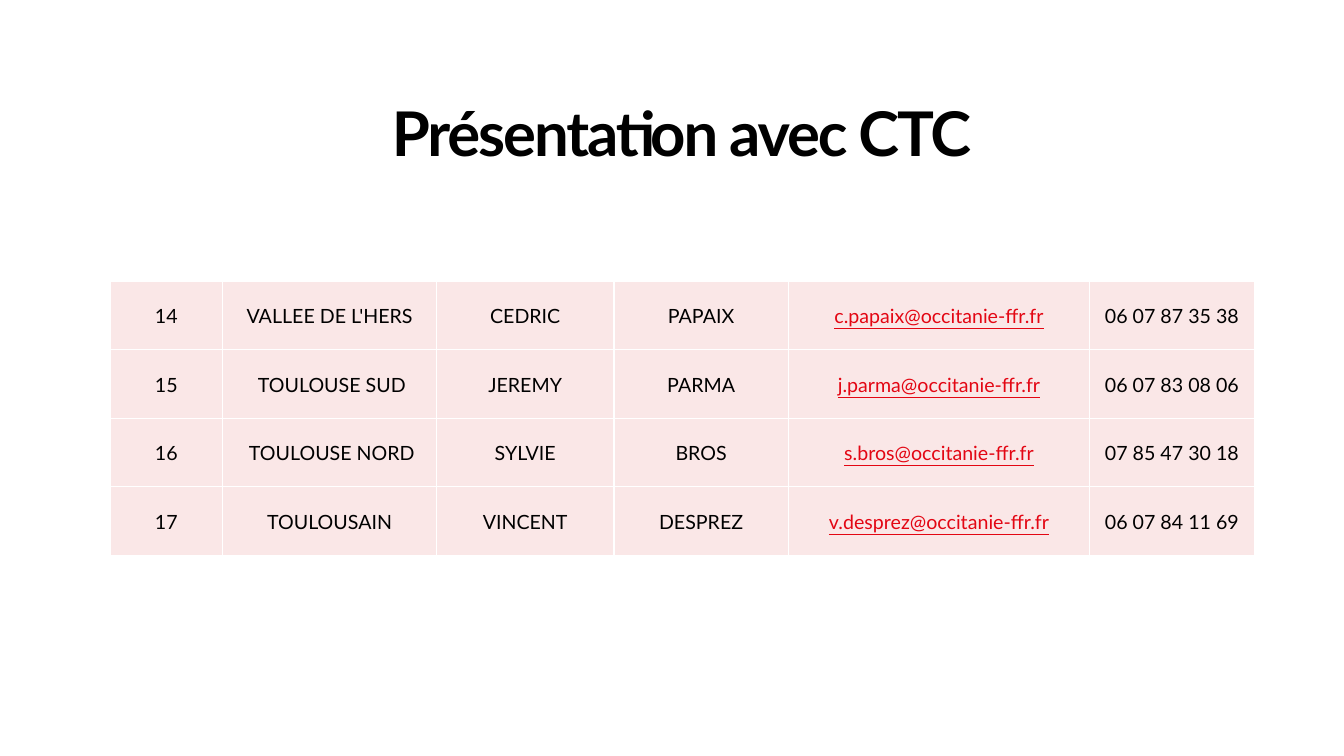
from lxml.etree import SubElement
from pptx import Presentation
from pptx.dml.color import RGBColor
from pptx.enum.text import MSO_ANCHOR as Anchor, MSO_AUTO_SIZE as Fit, PP_ALIGN as Align
from pptx.oxml.ns import qn
from pptx.util import Pt

PX = 9144
BLACK = RGBColor(0x00, 0x00, 0x00)
RED = RGBColor(0xE3, 0x06, 0x13)
PINK = RGBColor(0xFA, 0xE7, 0xE7)
WHITE = RGBColor(0xFF, 0xFF, 0xFF)
FONT = "Lato"
WIDTHS = [112, 212, 176, 173, 299, 163]
HIGH = 68
MAIL = 4
ROWS = [
    ("14", "VALLEE DE L'HERS", "CEDRIC", "PAPAIX", "c.papaix@occitanie-ffr.fr", "06 07 87 35 38"),
    ("15", " TOULOUSE SUD", "JEREMY", "PARMA", "j.parma@occitanie-ffr.fr", "06 07 83 08 06"),
    ("16", " TOULOUSE NORD", "SYLVIE", "BROS", "s.bros@occitanie-ffr.fr", "07 85 47 30 18"),
    ("17", "TOULOUSAIN", "VINCENT", "DESPREZ", "v.desprez@occitanie-ffr.fr", "06 07 84 11 69"),
]


def style(para, size, color):
    para.alignment = Align.CENTER
    para.font.name = FONT
    para.font.size = Pt(size)
    para.font.color.rgb = color


def border(cell):
    props = cell._tc.get_or_add_tcPr()
    for side in ("a:lnL", "a:lnR", "a:lnT", "a:lnB"):
        line = SubElement(props, qn(side), w=str(Pt(1)))
        fill = SubElement(line, qn("a:solidFill"))
        SubElement(fill, qn("a:srgbClr"), val=str(WHITE))


deck = Presentation()
deck.slide_width, deck.slide_height = 1333 * PX, 750 * PX
slide = deck.slides.add_slide(deck.slide_layouts[5])

title = slide.shapes.title
title.left, title.top, title.width, title.height = 226 * PX, 107 * PX, 900 * PX, 65 * PX
frame = title.text_frame
frame.text = "Présentation avec CTC"
frame.word_wrap = True
frame.auto_size = Fit.NONE
frame.vertical_anchor = Anchor.MIDDLE
para = frame.paragraphs[0]
para.line_spacing = 0.7
style(para, 44, BLACK)
para.font.bold = True
para.runs[0]._r.get_or_add_rPr().set("spc", "-150")

table = slide.shapes.add_table(
    len(ROWS), len(WIDTHS), 109 * PX, 279 * PX, sum(WIDTHS) * PX, len(ROWS) * HIGH * PX
).table
table.first_row = False
table.horz_banding = False
for col, width in zip(table.columns, WIDTHS):
    col.width = width * PX

for r, row in enumerate(ROWS):
    table.rows[r].height = HIGH * PX
    for c, text in enumerate(row):
        cell = table.cell(r, c)
        cell.text = text
        cell.vertical_anchor = Anchor.MIDDLE
        cell.margin_left = cell.margin_right = cell.margin_top = PX
        cell.margin_bottom = 0
        border(cell)
        cell.fill.solid()
        cell.fill.fore_color.rgb = PINK
        para = cell.text_frame.paragraphs[0]
        style(para, 14, RED if c == MAIL else BLACK)
        para.font.underline = c == MAIL

deck.save("out.pptx")
